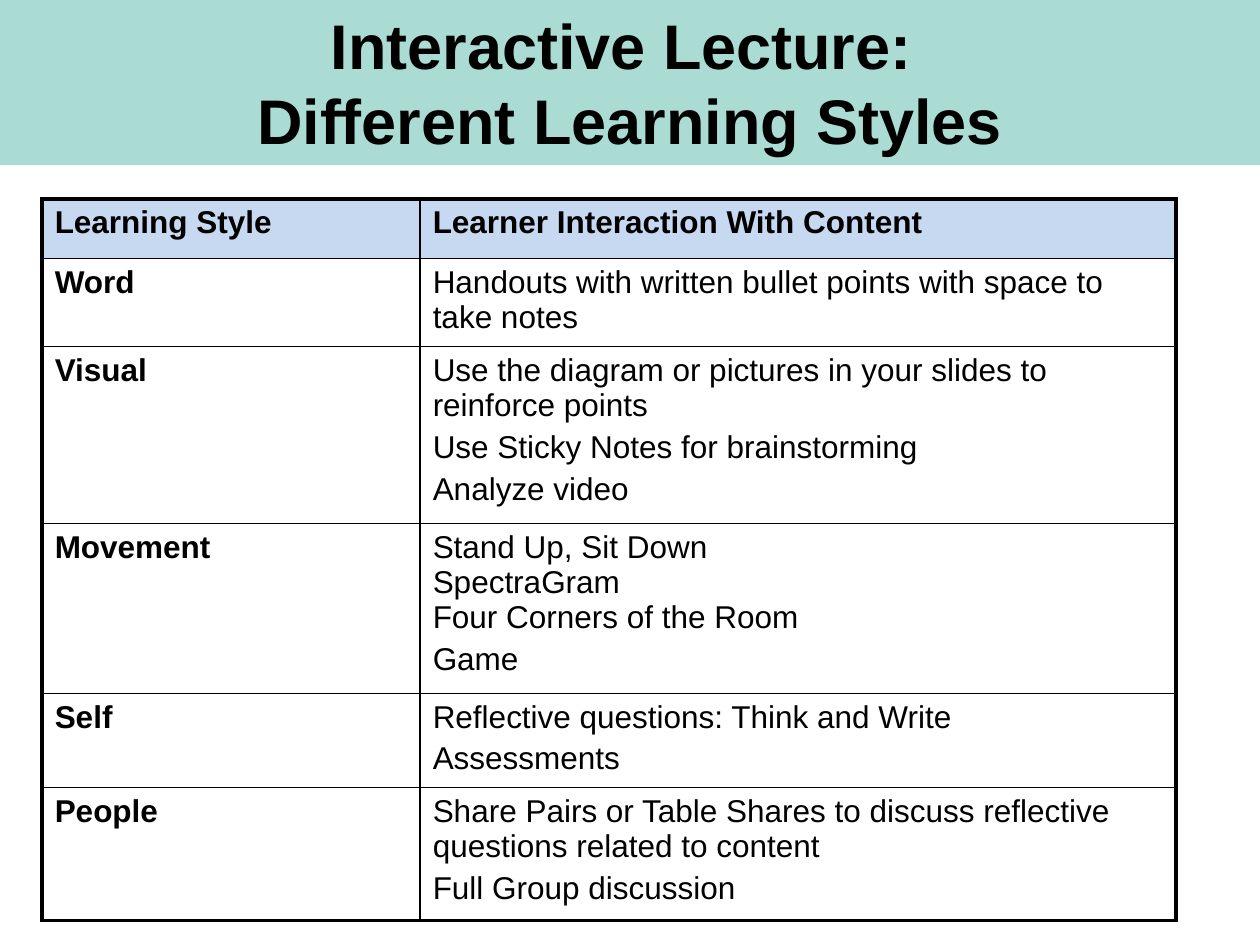
import pptx
import pptx.dml.color
import pptx.enum.text
import pptx.oxml
import pptx.oxml.ns
import pptx.util
from pptx.util import Cm, Pt

BLACK = pptx.dml.color.RGBColor(0x00, 0x00, 0x00)
WHITE = pptx.dml.color.RGBColor(0xFF, 0xFF, 0xFF)
MINT = pptx.dml.color.RGBColor(0xAB, 0xDC, 0xD4)
PALE_BLUE = pptx.dml.color.RGBColor(0xC6, 0xD9, 0xF1)
FONT = "Arial"
OUTER, INNER = Pt(2.25), Pt(1)

# The trailing space counts in the centring of the first line.
TITLE = ["Interactive Lecture: ", "Different Learning Styles"]

# Row height in cm, learning style, paragraphs of interaction (\v breaks a line)
ROWS = [
    (1.2, "Learning Style", ["Learner Interaction With Content"]),
    (1.78, "Word", ["Handouts with written bullet points with space to take notes"]),
    (3.56, "Visual", ["Use the diagram or pictures in your slides to reinforce points",
                      "Use Sticky Notes for brainstorming",
                      "Analyze video"]),
    (3.43, "Movement", ["Stand Up, Sit Down\vSpectraGram\vFour Corners of the Room",
                        "Game"]),
    (1.9, "Self", ["Reflective questions: Think and Write", "Assessments"]),
    (2.68, "People", ["Share Pairs or Table Shares to discuss reflective "
                      "questions related to content",
                      "Full Group discussion"]),
]
COLUMN_WIDTHS = [Cm(7.62), Cm(15.24)]


def write(frame, lines, size, bold):
    """Fill a text frame with one paragraph per line and yield each paragraph."""
    frame.text = "\n".join(lines)
    for paragraph in frame.paragraphs:
        paragraph.font.name = FONT
        paragraph.font.size = size
        paragraph.font.bold = bold
        paragraph.font.color.rgb = BLACK
        yield paragraph


def add_borders(cell, widths):
    """Draw black cell borders; widths maps a side (L, R, T, B) to a width."""
    properties = cell._tc.get_or_add_tcPr()
    for side, width in widths.items():
        properties.append(pptx.oxml.parse_xml(
            f'<a:ln{side} {pptx.oxml.ns.nsdecls("a")} w="{int(width)}"><a:solidFill>'
            f'<a:srgbClr val="{BLACK}"/></a:solidFill></a:ln{side}>'))


deck = pptx.Presentation()
deck.slide_width, deck.slide_height = Cm(25.4), Cm(19.05)
slide = deck.slides.add_slide(deck.slide_layouts[6])

styles = slide.shapes.add_table(
    len(ROWS), len(COLUMN_WIDTHS), Cm(0.85), Cm(4.01), sum(COLUMN_WIDTHS),
    Cm(sum(height for height, _, _ in ROWS))).table
for column, width in zip(styles.columns, COLUMN_WIDTHS):
    column.width = width

for r, (height, style, interactions) in enumerate(ROWS):
    styles.rows[r].height = Cm(height)
    for c, lines in enumerate([[style], interactions]):
        cell = styles.cell(r, c)
        for paragraph in write(cell.text_frame, lines, Pt(18), r == 0 or c == 0):
            paragraph.space_before = Pt(3.6)
        add_borders(cell, {
            "L": OUTER if c == 0 else INNER,
            "R": OUTER if c == len(COLUMN_WIDTHS) - 1 else INNER,
            "T": OUTER if r == 0 else INNER,
            "B": OUTER if r == len(ROWS) - 1 else INNER,
        })
        cell.fill.solid()
        cell.fill.fore_color.rgb = PALE_BLUE if r == 0 else WHITE

banner = slide.shapes.add_textbox(0, 0, deck.slide_width, Cm(3.33))
banner.fill.solid()
banner.fill.fore_color.rgb = MINT
banner.text_frame.word_wrap = True
banner.text_frame.auto_size = pptx.enum.text.MSO_AUTO_SIZE.SHAPE_TO_FIT_TEXT
for paragraph in write(banner.text_frame, TITLE, Pt(36), True):
    paragraph.alignment = pptx.enum.text.PP_ALIGN.CENTER

deck.save("out.pptx")
